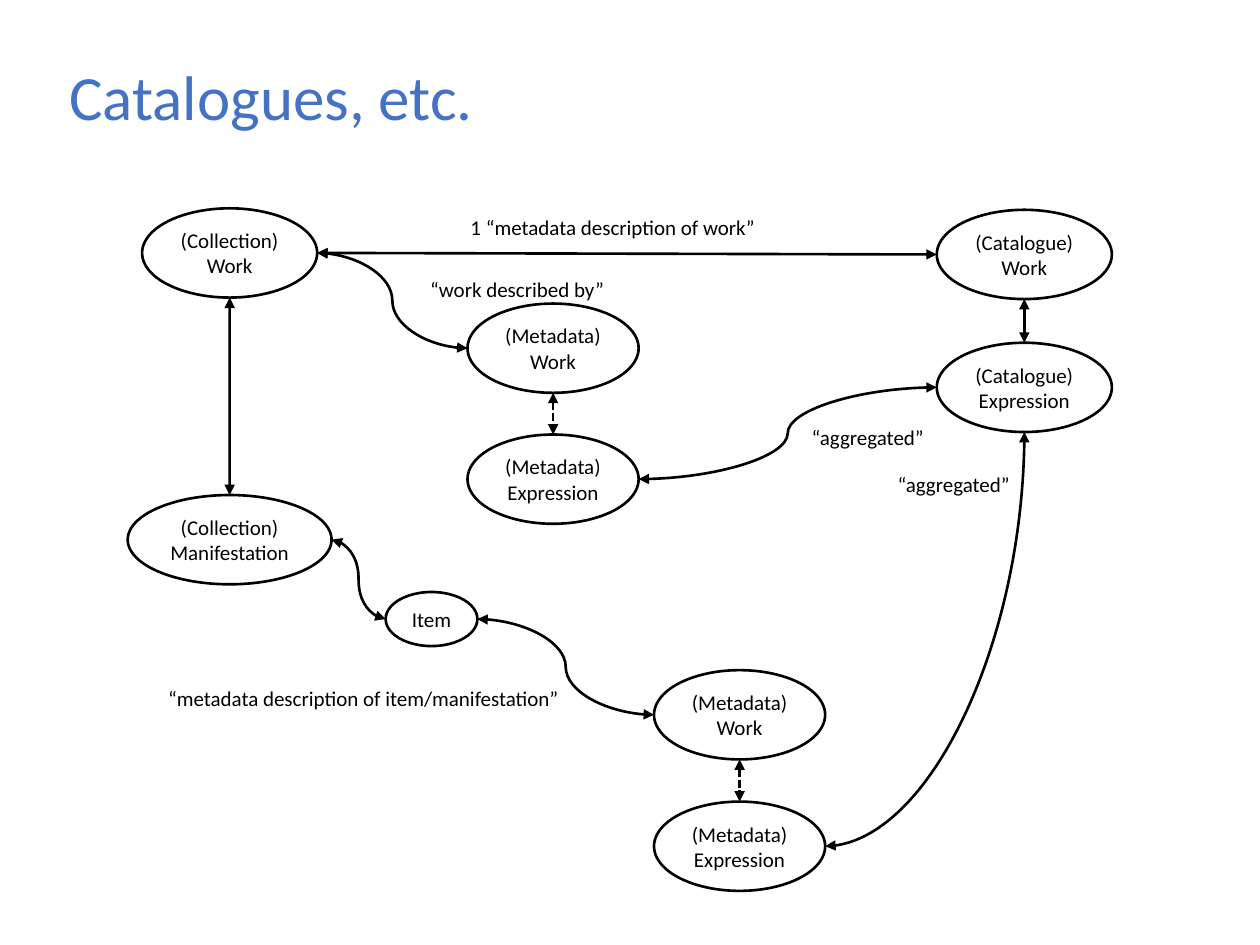
from lxml import etree
from pptx import Presentation
from pptx.dml.color import RGBColor
from pptx.enum.dml import MSO_LINE
from pptx.enum.shapes import MSO_CONNECTOR, MSO_SHAPE
from pptx.enum.text import MSO_ANCHOR, MSO_AUTO_SIZE, PP_ALIGN
from pptx.oxml.ns import qn
from pptx.util import Cm, Pt

COLORS = {"title": "4472C4", "ink": "000000"}
FONT = "Calibri"
ELLIPSE = MSO_SHAPE.OVAL
STRAIGHT, CURVE = MSO_CONNECTOR.STRAIGHT, MSO_CONNECTOR.CURVE
DASH = MSO_LINE.SQUARE_DOT
LEFT, CENTER = PP_ALIGN.LEFT, PP_ALIGN.CENTER
MIDDLE, TOP = MSO_ANCHOR.MIDDLE, MSO_ANCHOR.TOP
FIT_SHAPE = MSO_AUTO_SIZE.SHAPE_TO_FIT_TEXT
NODE_HEIGHT = 1.8

# Where a link meets an ellipse, as shares of its width and height
SIDES = {"top": (0.5, 0), "bottom": (0.5, 1), "left": (0, 0.5), "right": (1, 0.5)}


class DiagramSlide:
    """The current slide and the style of its elements; lengths in cm."""

    def __init__(self, deck):
        self.slide = deck.slides.add_slide(deck.slide_layouts[5])

    def set_text(self, shape, lines, align=CENTER, anchor=MIDDLE, color="ink"):
        """Each line is a list of (text, size) runs."""
        frame = shape.text_frame
        frame.word_wrap = False
        frame.vertical_anchor = anchor
        for number, runs in enumerate(lines):
            para = frame.add_paragraph() if number else frame.paragraphs[0]
            para.alignment = align
            for text, size in runs:
                span = para.add_run()
                span.text = text
                span.font.name = FONT
                span.font.size = Pt(size)
                span.font.color.rgb = RGBColor.from_string(COLORS[color])

    def title(self, text, left, top, width, height):
        box = self.slide.shapes.title
        box.left, box.top, box.width, box.height = map(Cm, (left, top, width, height))
        self.set_text(box, [[(text, 36)]], LEFT, TOP, "title")

    def node(self, lines, center_x, center_y, width, height=NODE_HEIGHT):
        shape = self.slide.shapes.add_shape(
            ELLIPSE, Cm(center_x - width / 2), Cm(center_y - height / 2),
            Cm(width), Cm(height))
        shape.shadow.inherit = False
        shape.fill.background()
        self.outline(shape.line)
        self.set_text(shape, [[(line, 12)] for line in lines])
        return shape

    def label(self, text, left, top, width, height=1.02, lead=" "):
        box = self.slide.shapes.add_textbox(*map(Cm, (left, top, width, height)))
        runs = [(lead, 18)] if lead else []
        self.set_text(box, [runs + [(text, 12)]], anchor=TOP)
        box.text_frame.auto_size = FIT_SHAPE

    def outline(self, line):
        line.color.rgb = RGBColor.from_string(COLORS["ink"])
        line.width = Pt(1.5)

    def link(self, start, start_side, end, end_side, kind=CURVE, dash=None):
        points = []
        for shape, side in ((start, start_side), (end, end_side)):
            across, down = SIDES[side]
            points += [int(shape.left + across * shape.width),
                       int(shape.top + down * shape.height)]
        line = self.slide.shapes.add_connector(kind, *points)
        self.outline(line.line)
        if dash:
            line.line.dash_style = dash
        properties = line._element.spPr
        stroke = properties.find(qn("a:ln"))
        for arrow in ("a:headEnd", "a:tailEnd"):
            etree.SubElement(stroke, qn(arrow), type="triangle")
        etree.SubElement(properties, qn("a:effectLst"))
        return line


def main():
    deck = Presentation()
    deck.slide_width, deck.slide_height = Cm(25.4), Cm(19.05)
    page = DiagramSlide(deck)
    page.title("Catalogues, etc.", 1.14, 1.04, 8.74, 1.8)

    # Entities
    nodes = {
        name: page.node(*details) for name, details in {
            "collection work": (["(Collection)", "Work"], 4.63, 5.1, 3.53),
            "manifestation": (["(Collection)", "Manifestation"], 4.63, 10.88, 4.11),
            "item": (["Item"], 8.7, 12.48, 1.85, 1.09),
            "catalogue work": (["(Catalogue)", "Work"], 20.65, 5.13, 3.53),
            "catalogue expression": (["(Catalogue)", "Expression"], 20.65, 7.81, 3.53),
            "upper work": (["(Metadata)", "Work"], 11.15, 7.02, 3.45),
            "upper expression": (["(Metadata)", "Expression"], 11.15, 9.66, 3.45),
            "lower work": (["(Metadata)", "Work"], 14.91, 14.41, 3.45),
            "lower expression": (["(Metadata)", "Expression"], 14.91, 17.06, 3.45),
        }.items()
    }

    # Straight links
    page.link(nodes["collection work"], "right", nodes["catalogue work"], "left", STRAIGHT)
    for upper, lower, dash in (
        ("collection work", "manifestation", None),
        ("catalogue work", "catalogue expression", None),
        ("upper work", "upper expression", DASH),
        ("lower work", "lower expression", DASH),
    ):
        page.link(nodes[upper], "bottom", nodes[lower], "top", STRAIGHT, dash)

    # S-curves
    for start, end in (
        ("collection work", "upper work"),
        ("manifestation", "item"),
        ("item", "lower work"),
        ("upper expression", "catalogue expression"),
    ):
        page.link(nodes[start], "right", nodes[end], "left")

    # Single bend
    bend = page.link(nodes["lower expression"], "right",
                     nodes["catalogue expression"], "bottom")
    bend._element.spPr.find(qn("a:prstGeom")).set("prst", "curvedConnector2")

    # Relationship labels
    page.label("1 “metadata description of work”", 8.94, 3.99, 6.68)
    page.label("“work described by”", 8.26, 5.23, 4.19)
    page.label("“metadata description of item/manifestation”", 2.95, 13.49, 8.61)
    page.label("“aggregated”", 16.1, 8.43, 2.79, 0.76, lead="")
    page.label("“aggregated”", 17.68, 9.17, 2.95)

    deck.save("out.pptx")


if __name__ == "__main__":
    main()
